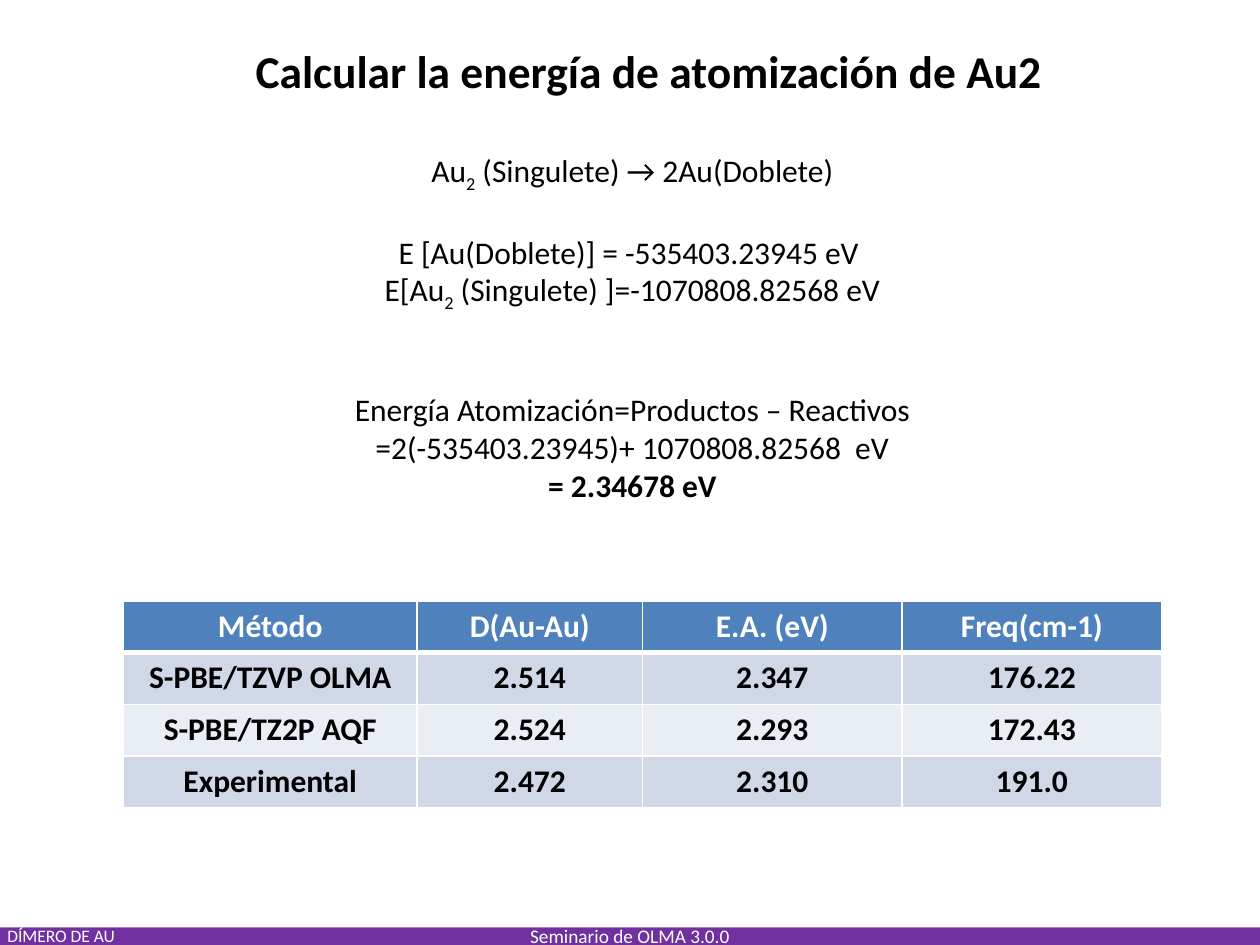
import pptx
import pptx.dml.color
import pptx.enum.shapes
import pptx.enum.text
import pptx.oxml
import pptx.oxml.ns
import pptx.util
from pptx.util import Inches

FONT = "Calibri"
BLACK, WHITE, PURPLE = "000000", "FFFFFF", "7030A0"
HEADER_BLUE, ROW_BLUE, ROW_PALE = "4F81BD", "D0D8E8", "E9EDF4"
CENTER = pptx.enum.text.PP_ALIGN.CENTER
LEFT = pptx.enum.text.PP_ALIGN.LEFT

# Each equation: (space before in points, bold, [(text, is subscript)])
EQUATIONS = [
    (0, False, [("Au", False), ("2", True), (" (Singulete) → 2Au(Doblete)", False)]),
    (22, False, [("E [Au(Doblete)] = -535403.23945 eV ", False)]),
    (0, False, [("E[Au", False), ("2", True), (" (Singulete) ]=-1070808.82568 eV", False)]),
    (44, False, [("Energía Atomización=Productos – Reactivos", False)]),
    (0, False, [("=2(-535403.23945)+ 1070808.82568  eV", False)]),
    (0, True, [("= 2.34678 eV", False)]),
]

RESULTS = [
    ("Método", "D(Au-Au)", "E.A. (eV)", "Freq(cm-1)"),
    ("S-PBE/TZVP OLMA", "2.514", "2.347", "176.22"),
    ("S-PBE/TZ2P AQF", "2.524", "2.293", "172.43"),
    ("Experimental", "2.472", "2.310", "191.0"),
]
COLUMN_WIDTHS = (2.33, 1.79, 2.06, 2.06)
ROW_HEIGHT = 0.41


def rgb(color):
    return pptx.dml.color.RGBColor.from_string(color)


def style(paragraph, size, color, bold=False, align=LEFT):
    paragraph.alignment = align
    font = paragraph.font
    font.name, font.size, font.bold = FONT, pptx.util.Pt(size), bold
    font.color.rgb = rgb(color)


def add_text_box(slide, left, top, width, height):
    frame = slide.shapes.add_textbox(
        Inches(left), Inches(top), Inches(width), Inches(height)).text_frame
    frame.word_wrap = True
    return frame


def add_label(slide, text, position, size, color, bold=False):
    line = add_text_box(slide, *position).paragraphs[0]
    line.text = text
    style(line, size, color, bold)


def add_footer_band(slide, text):
    band = slide.shapes.add_shape(
        pptx.enum.shapes.MSO_SHAPE.RECTANGLE,
        Inches(0), Inches(7.36), Inches(10), Inches(0.14))
    band.shadow.inherit = False
    band.fill.solid()
    band.fill.fore_color.rgb = rgb(PURPLE)
    band.line.fill.background()
    band.text_frame.vertical_anchor = pptx.enum.text.MSO_ANCHOR.MIDDLE
    caption = band.text_frame.paragraphs[0]
    caption.text = text
    style(caption, 11, WHITE, align=CENTER)


def add_equations(slide):
    frame = add_text_box(slide, 2.52, 1.15, 5, 3.13)
    for index, (space, bold, parts) in enumerate(EQUATIONS):
        equation = frame.add_paragraph() if index else frame.paragraphs[0]
        style(equation, 18, BLACK, bold, CENTER)
        if space:
            equation.space_before = pptx.util.Pt(space)
        for text, is_subscript in parts:
            run = equation.add_run()
            run.text = text
            if is_subscript:
                run._r.get_or_add_rPr().set("baseline", "-25000")


def set_borders(cell, top, bottom):
    """Draw white cell borders; top and bottom widths are in points."""
    properties = cell._tc.get_or_add_tcPr()
    for side, width in (("L", 1), ("R", 1), ("T", top), ("B", bottom)):
        properties.append(pptx.oxml.parse_xml(
            f'<a:ln{side} {pptx.oxml.ns.nsdecls("a")} w="{pptx.util.Pt(width)}">'
            f'<a:solidFill><a:srgbClr val="{WHITE}"/></a:solidFill></a:ln{side}>'))


def add_results_table(slide):
    table = slide.shapes.add_table(
        len(RESULTS), len(COLUMN_WIDTHS), Inches(0.98), Inches(4.77),
        Inches(sum(COLUMN_WIDTHS)), Inches(ROW_HEIGHT * len(RESULTS))).table
    for column, width in zip(table.columns, COLUMN_WIDTHS):
        column.width = Inches(width)
    for row_index, values in enumerate(RESULTS):
        table.rows[row_index].height = Inches(ROW_HEIGHT)
        is_header = row_index == 0
        fill = HEADER_BLUE if is_header else (ROW_BLUE if row_index % 2 else ROW_PALE)
        for column_index, value in enumerate(values):
            cell = table.cell(row_index, column_index)
            set_borders(cell, 3 if row_index == 1 else 1, 3 if is_header else 1)
            cell.fill.solid()
            cell.fill.fore_color.rgb = rgb(fill)
            entry = cell.text_frame.paragraphs[0]
            entry.text = value
            style(entry, 18, WHITE if is_header else BLACK, True, CENTER)


def main():
    presentation = pptx.Presentation()
    presentation.slide_width, presentation.slide_height = Inches(10), Inches(7.5)
    slide = presentation.slides.add_slide(presentation.slide_layouts[6])
    add_footer_band(slide, "Seminario de OLMA 3.0.0")
    add_label(slide, "Calcular la energía de atomización de Au2",
              (1.93, 0.29, 6.67, 0.54), 26, BLACK, True)
    add_equations(slide)
    add_results_table(slide)
    add_label(slide, "DÍMERO DE AU", (-0.04, 7.29, 4.25, 0.27), 10, WHITE)
    presentation.save("out.pptx")


if __name__ == "__main__":
    main()
